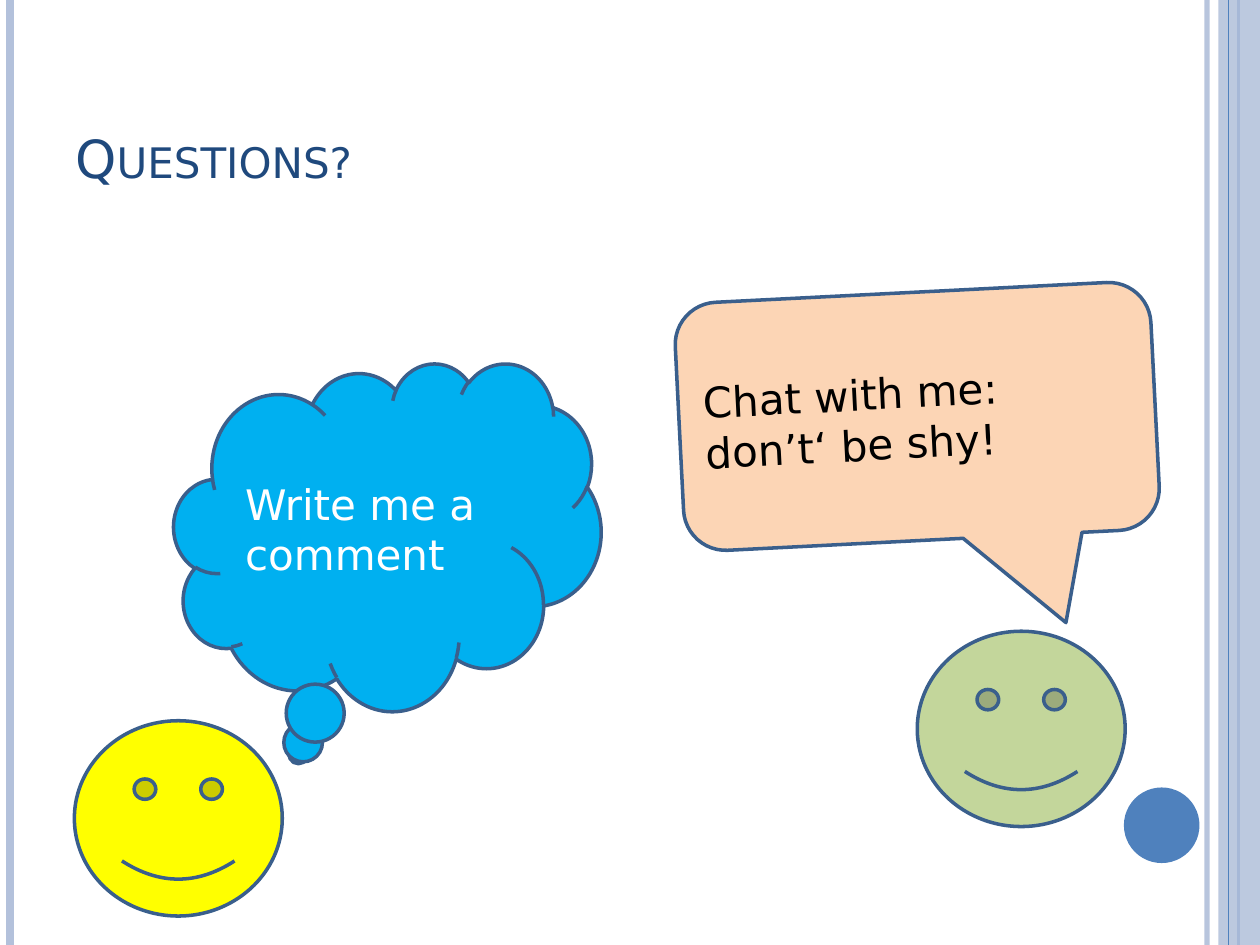
from lxml import etree
from pptx import Presentation
from pptx.dml.color import RGBColor
from pptx.enum.shapes import MSO_CONNECTOR, MSO_SHAPE
from pptx.enum.text import MSO_ANCHOR, PP_ALIGN
from pptx.oxml.ns import qn
from pptx.util import Inches, Pt

STRAIGHT = MSO_CONNECTOR.STRAIGHT
RECTANGLE, OVAL, SMILEY = MSO_SHAPE.RECTANGLE, MSO_SHAPE.OVAL, MSO_SHAPE.SMILEY_FACE
SPEECH, THOUGHT = MSO_SHAPE.ROUNDED_RECTANGULAR_CALLOUT, MSO_SHAPE.CLOUD_CALLOUT
MIDDLE, BOTTOM, LEFT = MSO_ANCHOR.MIDDLE, MSO_ANCHOR.BOTTOM, PP_ALIGN.LEFT

PALE_BLUE = RGBColor(0xB3, 0xC1, 0xDB)
BLUE = RGBColor(0x4F, 0x81, 0xBD)
NAVY = RGBColor(0x1F, 0x49, 0x7D)
OUTLINE = RGBColor(0x3A, 0x5F, 0x8C)
PEACH = RGBColor(0xFC, 0xD5, 0xB5)
SKY = RGBColor(0x00, 0xB0, 0xF0)
GREEN = RGBColor(0xC3, 0xD6, 0x9B)
YELLOW = RGBColor(0xFF, 0xFF, 0x00)
BLACK = RGBColor(0x00, 0x00, 0x00)
WHITE = RGBColor(0xFF, 0xFF, 0xFF)
FONT = "DejaVu Sans"

COLUMNS, ROWS = 100, 75

presentation = Presentation()
presentation.slide_width, presentation.slide_height = Inches(10), Inches(7.5)
column = presentation.slide_width // COLUMNS
row = presentation.slide_height // ROWS
slide = presentation.slides.add_slide(presentation.slide_layouts[6])
shapes = slide.shapes


def set_opacity(element, percent):
    color = next(element.iter(qn("a:srgbClr")))
    etree.SubElement(color, qn("a:alpha"), val=str(percent * 1000))


def write(shape, lines, anchor, size, color):
    """Fill the shape with one left-aligned paragraph per line."""
    frame = shape.text_frame
    frame.word_wrap, frame.vertical_anchor = True, anchor
    frame.text = "\n".join(lines)
    for paragraph in frame.paragraphs:
        paragraph.alignment = LEFT
        font = paragraph.runs[0].font
        for name, value in {"name": FONT, "size": Pt(size)}.items():
            setattr(font, name, value)
        font.color.rgb = color


# Vertical rules and the band at the right edge, from back to front
for kind, x, color, width, opacity in [
    ("rule", 95.8, PALE_BLUE, 3, 93),
    ("rule", 0.8, PALE_BLUE, 4.5, 100),
    ("rule", 98.3, BLUE, 1.5, 100),
    ("band", 96.7, PALE_BLUE, 3.3, 87),
    ("rule", 97.5, BLUE, 0.75, 100),
]:
    if kind == "rule":
        shape = shapes.add_connector(STRAIGHT, int(x * column), 0, int(x * column), ROWS * row)
        shape.line.color.rgb, shape.line.width = color, Pt(width)
        etree.SubElement(shape._element.spPr, qn("a:effectLst"))
    else:
        shape = shapes.add_shape(RECTANGLE, int(x * column), 0, int(width * column), ROWS * row)
        shape.shadow.inherit = False
        shape.fill.solid()
        shape.fill.fore_color.rgb = color
        shape.line.fill.background()
    if opacity < 100:
        set_opacity(shape._element.spPr, opacity)

title = shapes.add_textbox(5 * column, 3 * row, int(81.7 * column), int(12.5 * row))
write(title, ["Questions?"], BOTTOM, 30, NAVY)
title.text_frame.paragraphs[0].runs[0]._r.get_or_add_rPr().set("cap", "small")

# Page dot, bubbles and faces: preset, left, top, width, height, fill, other formats
for preset, x, y, width, height, fill, formats in [
    (OVAL, 89.2, 62.5, 6, 6, BLUE, {"outlined": False}),
    (SPEECH, 53.9, 23.2, 37.8, 19.7, PEACH,
     {"rotation": 357.1, "adjustments": [0.29, 0.86, 0.17],
      "lines": ["Chat with me:", "don’t‘ be shy!"], "color": BLACK}),
    (THOUGHT, 13.8, 28.8, 33.9, 27.6, SKY,
     {"lines": ["Write me a comment"], "color": WHITE}),
    (SMILEY, 72.8, 50.1, 16.5, 15.5, GREEN, {}),
    (SMILEY, 5.9, 57.2, 16.5, 15.5, YELLOW, {}),
]:
    shape = shapes.add_shape(preset, int(x * column), int(y * row),
                             int(width * column), int(height * row))
    shape.shadow.inherit = False
    shape.rotation = formats.get("rotation", 0)
    shape.fill.solid()
    shape.fill.fore_color.rgb = fill
    if formats.get("outlined", True):
        shape.line.color.rgb, shape.line.width = OUTLINE, Pt(2)
    else:
        shape.line.fill.background()
    for index, value in enumerate(formats.get("adjustments", [])):
        shape.adjustments[index] = value
    if "lines" in formats:
        write(shape, formats["lines"], MIDDLE, 24, formats["color"])

presentation.save("out.pptx")
